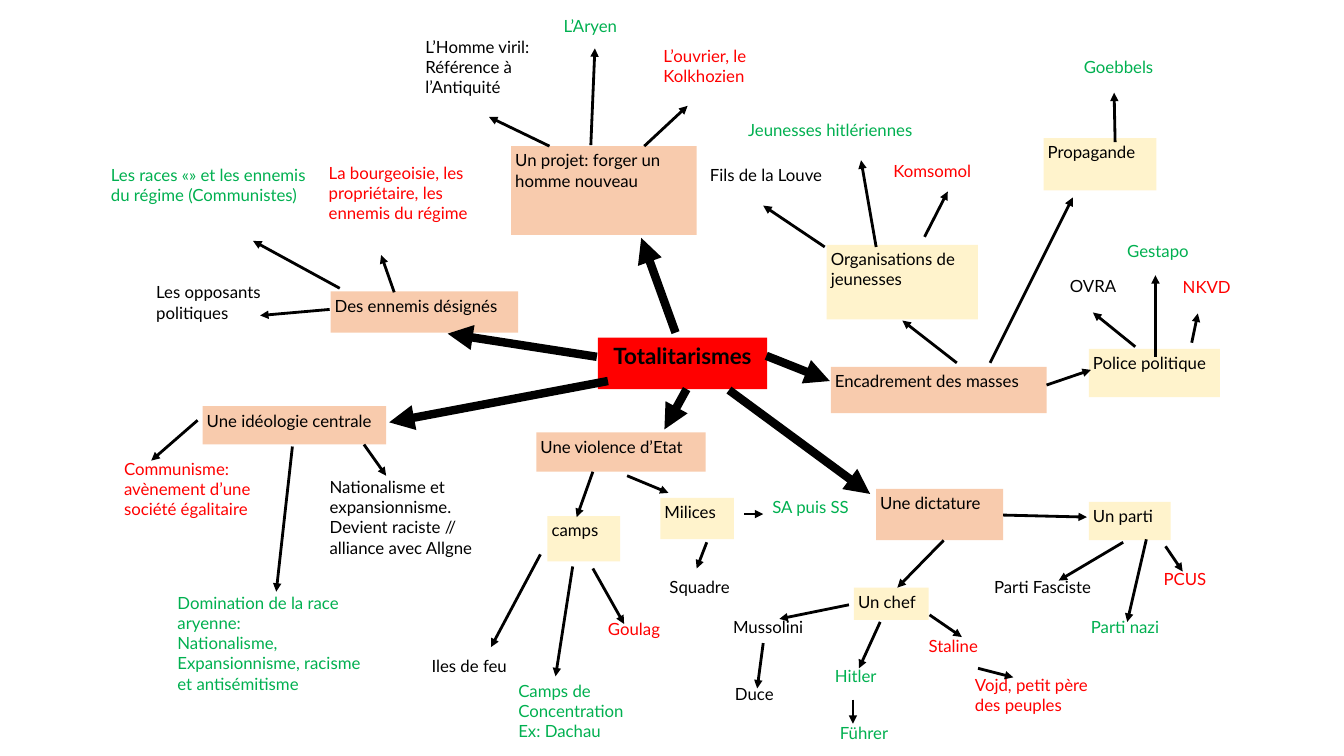
import lxml.etree
import pptx
import pptx.dml.color
import pptx.enum.shapes
import pptx.enum.text
import pptx.oxml.ns
import pptx.util

COLUMNS, ROWS = 1333, 750
COLORS = {
    "core": "FF0000", "theme": "F8CBAD", "branch": "FFF3CC",
    "italy": "000000", "germany": "00B050", "ussr": "FF0000", "ink": "000000",
}

deck = pptx.Presentation()
deck.slide_width = pptx.util.Inches(13.33)
deck.slide_height = pptx.util.Inches(7.5)
column = deck.slide_width / COLUMNS
row = deck.slide_height / ROWS
page = deck.slides.add_slide(deck.slide_layouts[6])

INSET = pptx.util.Inches(0.04)
FRAME = {
    "word_wrap": True, "vertical_anchor": pptx.enum.text.MSO_ANCHOR.TOP,
    "margin_left": INSET, "margin_right": INSET, "margin_top": INSET, "margin_bottom": INSET,
}
BODY = {"name": "Lato", "size": pptx.util.Pt(12), "bold": False}
TITLE = BODY | {"size": pptx.util.Pt(16), "bold": True}


def on_grid(*places):
    """Turn alternating column and row numbers into slide lengths."""
    return [round(place * (row if index % 2 else column)) for index, place in enumerate(places)]


def write(box, wording, color, font, align):
    for name, value in FRAME.items():
        setattr(box.text_frame, name, value)
    box.text_frame.text = wording
    for para in box.text_frame.paragraphs:
        para.alignment = align
        span = para.runs[0]
        for name, value in font.items():
            setattr(span.font, name, value)
        span.font.color.rgb = pptx.dml.color.RGBColor.from_string(COLORS[color])


# Filled boxes: left, top, width, height, wording
boxes = {
    "core": [(593, 335, 168, 51, "Totalitarismes")],
    "theme": [
        (824, 364, 214, 46, "Encadrement des masses"),
        (869, 485, 126, 51, "Une dictature"),
        (532, 429, 168, 39, "Une violence d’Etat"),
        (507, 145, 184, 88, "Un projet: forger un homme nouveau"),
        (201, 403, 182, 38, "Une idéologie centrale"),
        (328, 289, 186, 41, "Des ennemis désignés"),
    ],
    "branch": [
        (1080, 346, 130, 48, "Police politique"),
        (1035, 137, 112, 52, "Propagande"),
        (820, 243, 150, 74, "Organisations de jeunesses"),
        (1080, 498, 81, 38, "Un parti"),
        (847, 583, 74, 32, "Un chef"),
        (655, 494, 73, 41, "Milices"),
        (543, 512, 72, 45, "camps"),
    ],
}
for level, entries in boxes.items():
    is_core = level == "core"
    align = pptx.enum.text.PP_ALIGN.CENTER if is_core else pptx.enum.text.PP_ALIGN.LEFT
    for *place, wording in entries:
        box = page.shapes.add_shape(pptx.enum.shapes.MSO_SHAPE.RECTANGLE, *on_grid(*place))
        box.shadow.inherit = False
        box.fill.solid()
        box.fill.fore_color.rgb = pptx.dml.color.RGBColor.from_string(COLORS[level])
        box.line.fill.background()
        write(box, wording, "ink", TITLE if is_core else BODY, align)

# Examples, coloured by country
labels = {
    "italy": [
        (700, 159, 129, 45, "Fils de la Louve"),
        (1057, 269, 59, 42, "OVRA"),
        (982, 568, 144, 40, "Parti Fasciste"),
        (725, 674, 73, 39, "Duce"),
        (723, 608, 102, 35, "Mussolini"),
        (660, 568, 90, 36, "Squadre"),
        (424, 647, 90, 36, "Iles de feu"),
        (418, 32, 134, 106, "L’Homme viril: Référence à l’Antiquité"),
        (151, 276, 134, 106, "Les opposants politiques"),
        (323, 469, 184, 121,
         "Nationalisme et expansionnisme. Devient raciste // alliance avec Allgne"),
    ],
    "germany": [
        (738, 115, 202, 42, "Jeunesses hitlériennes"),
        (1071, 52, 90, 36, "Goebbels"),
        (1114, 235, 73, 38, "Gestapo"),
        (1078, 608, 110, 38, "Parti nazi"),
        (824, 656, 73, 39, "Hitler"),
        (829, 713, 73, 38, "Führer"),
        (762, 489, 90, 36, "SA puis SS"),
        (510, 671, 138, 125, "Camps de\nConcentration\nEx: Dachau"),
        (555, 12, 86, 41, "L’Aryen"),
        (106, 159, 202, 102, "Les races «» et les ennemis du régime (Communistes)"),
        (172, 584, 190, 163, "Domination de la race aryenne:\n"
         "Nationalisme, Expansionnisme, racisme et antisémitisme"),
    ],
    "ussr": [
        (882, 155, 126, 36, "Komsomol"),
        (1169, 271, 59, 42, "NKVD"),
        (1150, 560, 73, 39, "PCUS"),
        (963, 665, 146, 80, "Vojd, petit père\ndes peuples"),
        (917, 627, 73, 39, "Staline"),
        (599, 610, 90, 36, "Goulag"),
        (654, 41, 126, 69, "L’ouvrier, le Kolkhozien"),
        (322, 157, 163, 112, "La bourgeoisie, les propriétaire, les ennemis du régime"),
        (119, 451, 150, 99, "Communisme: avènement d’une société égalitaire"),
    ],
}
for country, entries in labels.items():
    for *place, wording in entries:
        box = page.shapes.add_textbox(*on_grid(*place))
        write(box, wording, country, BODY, pptx.enum.text.PP_ALIGN.LEFT)

# Arrows by line width in points: start column and row, end column and row
arrows = {
    2: [
        # Encadrement des masses
        (949, 360, 895, 318), (982, 360, 1064, 196), (1038, 382, 1082, 367),
        (818, 245, 757, 204), (869, 245, 854, 159), (917, 235, 940, 190),
        (1106, 141, 1105, 92),
        (1126, 344, 1084, 310), (1146, 354, 1146, 273), (1182, 340, 1188, 311),
        # Une dictature
        (995, 511, 1078, 513), (936, 536, 890, 583),
        (1114, 538, 1050, 576), (1137, 535, 1118, 617), (1156, 542, 1173, 567),
        (842, 600, 773, 614), (873, 617, 852, 663), (922, 610, 954, 632),
        (970, 663, 1005, 672), (846, 694, 846, 718), (757, 638, 751, 683),
        # Une violence d’Etat
        (622, 472, 663, 489), (588, 468, 572, 513),
        (536, 550, 487, 642), (568, 562, 551, 671), (588, 564, 619, 619),
        (701, 538, 691, 564), (738, 510, 757, 510),
        # Un projet
        (639, 145, 682, 105), (586, 144, 590, 48), (545, 145, 485, 116),
        # Des ennemis désignés
        (391, 290, 378, 253), (337, 286, 251, 239), (327, 307, 258, 313),
        # Une idéologie centrale
        (196, 417, 150, 457), (290, 443, 274, 587), (361, 441, 383, 472),
    ],
    6: [
        (670, 330, 636, 236), (592, 354, 444, 331), (603, 378, 386, 419),
        (681, 386, 659, 426), (723, 387, 863, 490), (760, 353, 823, 378),
    ],
}
for width, routes in arrows.items():
    for route in routes:
        arrow = page.shapes.add_connector(
            pptx.enum.shapes.MSO_CONNECTOR.STRAIGHT, *on_grid(*route))
        arrow.line.width = pptx.util.Pt(width)
        arrow.line.color.rgb = pptx.dml.color.RGBColor.from_string(COLORS["ink"])
        outline = arrow.line._get_or_add_ln()
        lxml.etree.SubElement(outline, pptx.oxml.ns.qn("a:tailEnd"), type="triangle")
        lxml.etree.SubElement(outline.getparent(), pptx.oxml.ns.qn("a:effectLst"))

deck.save("out.pptx")
